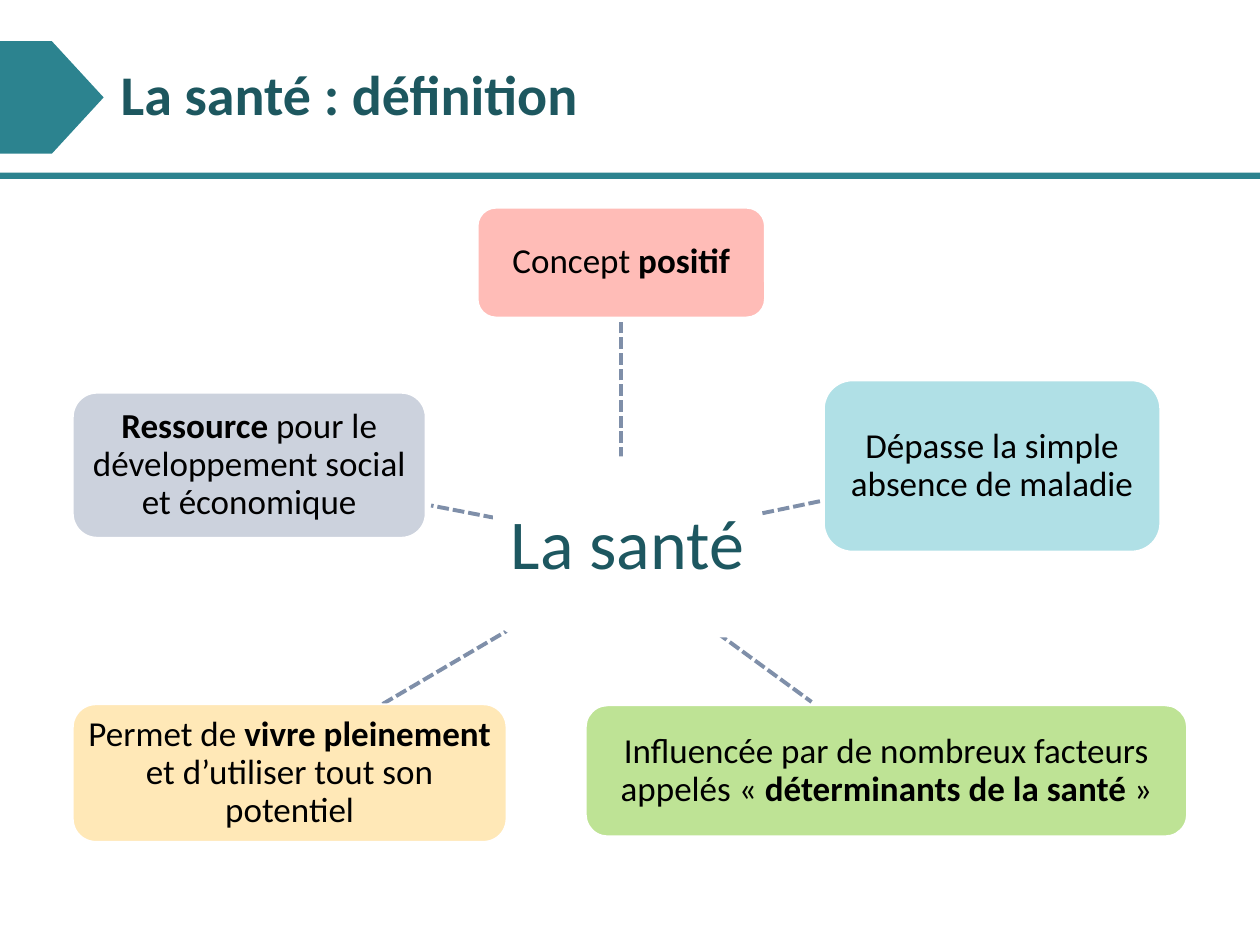
from dataclasses import dataclass

from lxml.etree import SubElement
from pptx import Presentation
from pptx.dml.color import RGBColor
from pptx.enum.dml import MSO_LINE
from pptx.enum.shapes import MSO_CONNECTOR, MSO_SHAPE
from pptx.enum.text import MSO_ANCHOR, PP_ALIGN
from pptx.oxml.ns import qn
from pptx.util import Cm, Pt

COLORS = {
    "teal": "2C838F", "title": "1D575F", "center": "1D5760", "spoke": "7F8FA9",
    "white": "FFFFFF", "black": "000000", "pink": "FFBCB7", "blue": "B0E0E6",
    "green": "BEE395", "yellow": "FFE8B7", "grey": "CCD2DD",
}

Runs = list[tuple[str, bool]]
Rect = tuple[float, float, float, float]


@dataclass
class Idea:
    """A box around the central theme; lengths in cm, spoke is x1, y1, x2, y2."""
    rect: Rect
    fill: str
    runs: Runs
    spoke: Rect


IDEAS = [
    Idea((9.63, 4.19, 5.79, 2.21), "pink",
         [("Concept ", False), ("positif", True)],
         (12.52, 9.25, 12.52, 6.4)),
    Idea((16.61, 7.67, 6.78, 3.45), "blue",
         [("Dépasse la simple absence de maladie", False)],
         (15.06, 10.41, 16.74, 10.06)),
    Idea((11.81, 14.22, 12.12, 2.64), "green",
         [("Influencée par de nombreux facteurs appelés « ", False),
          ("déterminants de la santé ", True), ("»", False)],
         (14.2, 12.57, 16.36, 14.15)),
    Idea((1.47, 14.2, 8.74, 2.77), "yellow",
         [("Permet de ", False), ("vivre pleinement ", True),
          ("et d’utiliser tout son potentiel", False)],
         (10.64, 12.47, 7.7, 14.2)),
    Idea((1.47, 7.92, 7.11, 2.92), "grey",
         [("Ressource ", True), ("pour le développement social et économique", False)],
         (9.98, 10.44, 8.69, 10.19)),
]


def rgb(name: str) -> RGBColor:
    return RGBColor.from_string(COLORS[name])


def write(tf, runs: Runs, *, size: float, color: str = "black",
          align=PP_ALIGN.CENTER) -> None:
    tf.word_wrap = True
    tf.vertical_anchor = MSO_ANCHOR.MIDDLE
    p = tf.paragraphs[0]
    p.alignment = align
    p.line_spacing = 0.9
    for text, bold in runs:
        r = p.add_run()
        r.text = text
        r.font.name = "Calibri"
        r.font.size = Pt(size)
        r.font.bold = bold
        r.font.color.rgb = rgb(color)


def add_block(s, kind, rect: Rect, fill: str):
    sp = s.shapes.add_shape(kind, *map(Cm, rect))
    sp.shadow.inherit = False
    sp.fill.solid()
    sp.fill.fore_color.rgb = rgb(fill)
    sp.line.fill.background()
    return sp


def add_box(s, rect: Rect, fill: str, runs: Runs, **fmt) -> None:
    sp = add_block(s, MSO_SHAPE.ROUNDED_RECTANGLE, rect, fill)
    sp.line.color.rgb = rgb("white")
    sp.line.width = Pt(1)
    tf = sp.text_frame
    inset = Cm(0.03 * rect[3])
    tf.margin_left = tf.margin_right = tf.margin_top = tf.margin_bottom = inset
    write(tf, runs, **fmt)


def add_spoke(s, ends: Rect) -> None:
    cx = s.shapes.add_connector(MSO_CONNECTOR.STRAIGHT, *map(Cm, ends))
    cx.line.color.rgb = rgb("spoke")
    cx.line.width = Pt(2.25)
    cx.line.dash_style = MSO_LINE.SQUARE_DOT
    SubElement(cx._element.spPr, qn("a:effectLst"))


def main() -> None:
    prs = Presentation()
    prs.slide_width, prs.slide_height = Cm(25.4), Cm(19.05)
    s = prs.slides.add_slide(prs.slide_layouts[5])

    add_block(s, MSO_SHAPE.PENTAGON, (0, 0.83, 2.09, 2.27), "teal")
    add_block(s, MSO_SHAPE.RECTANGLE, (0, 3.48, 25.4, 0.13), "teal")

    title = s.shapes.title
    title.left, title.top, title.width, title.height = map(Cm, (2.18, 0.66, 20.96, 2.62))
    write(title.text_frame, [("La santé : définition", True)],
          size=32, color="title", align=PP_ALIGN.LEFT)

    for idea in IDEAS:
        add_spoke(s, idea.spoke)
        add_box(s, idea.rect, idea.fill, idea.runs, size=20)
    add_box(s, (9.96, 9.22, 5.38, 3.61), "white", [("La santé", False)],
            size=40, color="center")

    prs.save("out.pptx")


if __name__ == "__main__":
    main()
